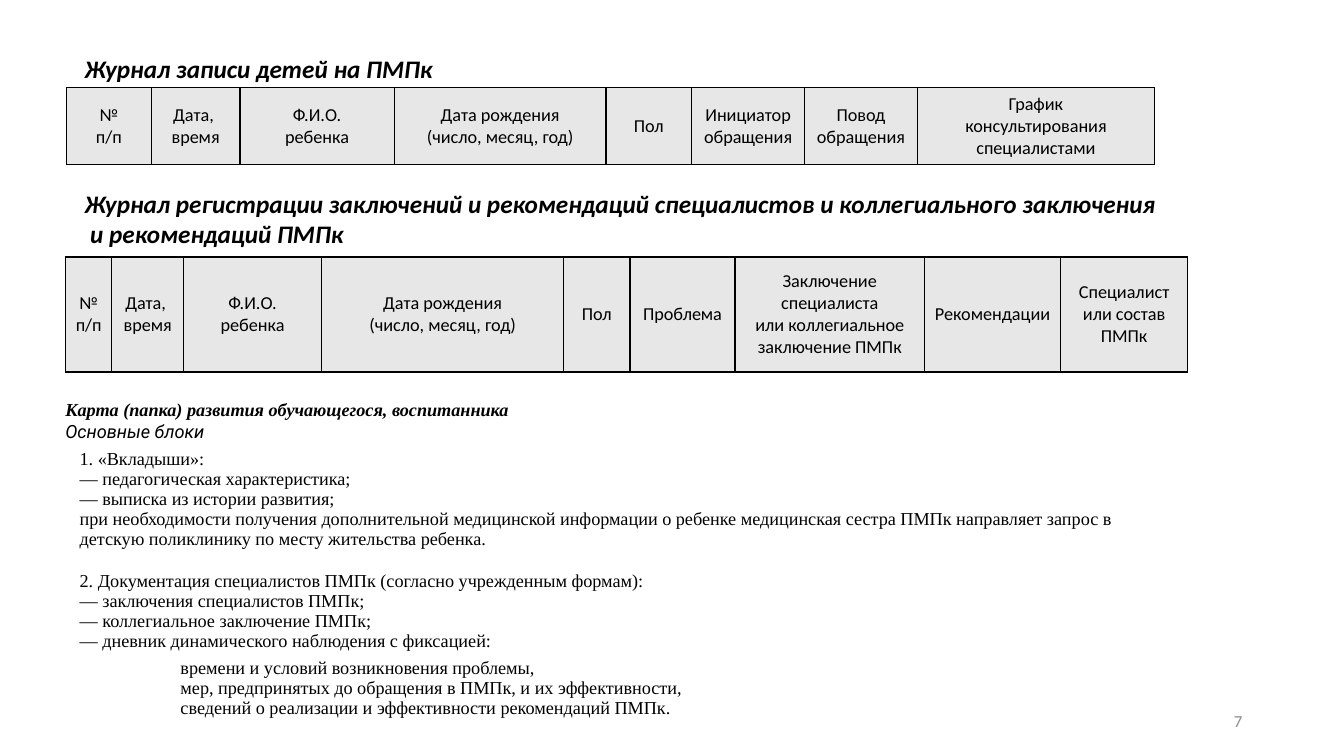
from lxml import etree
from pptx import Presentation
from pptx.dml.color import RGBColor
from pptx.enum.text import MSO_ANCHOR, PP_ALIGN
from pptx.oxml.ns import qn
from pptx.util import Inches, Pt

MIDDLE, TOP = MSO_ANCHOR.MIDDLE, MSO_ANCHOR.TOP
LEFT, CENTER, RIGHT = PP_ALIGN.LEFT, PP_ALIGN.CENTER, PP_ALIGN.RIGHT
TITLE_ONLY = 5
SANS, SERIF = "Calibri", "Times New Roman"
BLACK, GREY, WHITE, HEADER_FILL = "000000", "8C8C8C", "FFFFFF", "E7E7E7"

RECORD_COLUMNS = [
    (0.84, "№\vп/п"), (0.88, "Дата, \vвремя"), (1.53, "Ф.И.О.\vребенка"),
    (2.1, "Дата рождения\v(число, месяц, год)"), (0.85, "Пол"),
    (1.12, "Инициатор\vобращения"), (1.12, "Повод\vобращения"),
    (2.35, "График\vконсультирования\vспециалистами"),
]
CONCLUSION_COLUMNS = [
    (0.46, "№\vп/п"), (0.71, "Дата, \vвремя"), (1.37, "Ф.И.О.\vребенка"),
    (2.4, "Дата рождения\v(число, месяц, год)"), (0.66, "Пол"),
    (1.04, "Проблема"),
    (1.88, "Заключение\vспециалиста\vили коллегиальное\vзаключение ПМПк"),
    (1.35, "Рекомендации"), (1.26, "Специалист\vили состав ПМПк"),
]
INSERTS = (
    "1. «Вкладыши»:\v— педагогическая характеристика;\v"
    "— выписка из истории развития;\v"
    "при необходимости получения дополнительной медицинской информации о ребенке "
    "медицинская сестра ПМПк направляет запрос в детскую поликлинику "
    "по месту жительства ребенка."
)
DOCUMENTS = (
    "2. Документация специалистов ПМПк (согласно учрежденным формам):\v"
    "— заключения специалистов ПМПк;\v— коллегиальное заключение ПМПк;\v"
    "— дневник динамического наблюдения с фиксацией:"
)
DIARY = (
    "времени и условий возникновения проблемы,\v"
    "мер, предпринятых до обращения в ПМПк, и их эффективности,\v"
    "сведений о реализации и эффективности рекомендаций ПМПк."
)


def rgb(value):
    return RGBColor.from_string(value)


def format_paragraph(p, size, font=SANS, color=BLACK, bold=False, italic=False, align=LEFT):
    p.alignment = align
    for r in p.runs:
        f = r.font
        f.size, f.name, f.bold, f.italic = Pt(size), font, bold, italic
        f.color.rgb = rgb(color)


def place_text(sp, left, top, width, height, text, anchor=TOP, wrap=True):
    sp.left, sp.top, sp.width, sp.height = map(Inches, (left, top, width, height))
    tf = sp.text_frame
    tf.text = text
    tf.word_wrap, tf.vertical_anchor = wrap, anchor
    tf.margin_left = tf.margin_right = Inches(0.1)
    tf.margin_top = tf.margin_bottom = Inches(0.05)
    return tf.paragraphs


def add_text(s, *place, **options):
    return place_text(s.shapes.add_textbox(0, 0, 0, 0), *place, **options)


def set_borders(cell, color, width):
    tc_pr = cell._tc.get_or_add_tcPr()
    for i, side in enumerate(("lnL", "lnR", "lnT", "lnB")):
        ln = etree.Element(qn(f"a:{side}"), w=str(Pt(width)))
        fill = etree.SubElement(ln, qn("a:solidFill"))
        etree.SubElement(fill, qn("a:srgbClr"), val=color)
        tc_pr.insert(i, ln)


def add_grid(s, left, top, widths, heights, border, border_width):
    """Table without banding; cells get margins, borders and a middle anchor."""
    frame = s.shapes.add_table(len(heights), len(widths), Inches(left), Inches(top),
                               Inches(sum(widths)), Inches(sum(heights)))
    table = frame.table
    table.first_row = table.horz_banding = False
    for column, width in zip(table.columns, widths):
        column.width = Inches(width)
    for row, height in zip(table.rows, heights):
        row.height = Inches(height)
    for cell in table.iter_cells():
        cell.margin_left = cell.margin_right = Inches(0.05)
        cell.margin_top = cell.margin_bottom = Inches(0.05)
        cell.vertical_anchor = MIDDLE
        cell.fill.background()
        set_borders(cell, border, border_width)
    return table


def add_journal_header(s, left, top, height, columns):
    widths, labels = zip(*columns)
    table = add_grid(s, left, top, widths, [height], BLACK, 1)
    for cell, label in zip(table.iter_cells(), labels):
        cell.text = label
        cell.fill.solid()
        cell.fill.fore_color.rgb = rgb(HEADER_FILL)
        format_paragraph(cell.text_frame.paragraphs[0], 13, align=CENTER)


def add_blocks(s):
    table = add_grid(s, 0.74, 4.36, [10.67], [1.19, 1.67], WHITE, 1.5)
    table.cell(0, 0).text = INSERTS
    table.cell(1, 0).text = f"{DOCUMENTS}\n{DIARY}"
    for cell in table.iter_cells():
        for p in cell.text_frame.paragraphs:
            format_paragraph(p, 13, SERIF)
    diary = table.cell(1, 0).text_frame.paragraphs[1]
    diary.space_before = diary.space_after = Pt(5)
    diary._p.get_or_add_pPr().set("marL", str(Inches(1)))


def main():
    prs = Presentation()
    prs.slide_width, prs.slide_height = Inches(13.33), Inches(7.5)
    s = prs.slides.add_slide(prs.slide_layouts[TITLE_ONLY])

    # Journal of appointments
    title = place_text(s.shapes.title, 0.74, 0.48, 6.13, 0.4, "Журнал записи детей на ПМПк")
    format_paragraph(title[0], 18, bold=True, italic=True)
    add_journal_header(s, 0.66, 0.87, 0.75, RECORD_COLUMNS)

    # Journal of conclusions
    heading = add_text(
        s, 0.74, 1.82, 10.95, 0.7,
        "Журнал регистрации заключений и рекомендаций специалистов "
        "и коллегиального заключения\v и рекомендаций ПМПк", wrap=False)
    format_paragraph(heading[0], 18, bold=True, italic=True)
    add_journal_header(s, 0.65, 2.55, 1.14, CONCLUSION_COLUMNS)

    # Development card: its heading lies in front of the white table border
    add_blocks(s)
    card, blocks = add_text(
        s, 0.55, 3.9, 12, 0.5,
        "Карта (папка) развития обучающегося, воспитанника\nОсновные блоки", wrap=False)
    format_paragraph(card, 13, SERIF, bold=True, italic=True)
    format_paragraph(blocks, 13, "Roboto", italic=True)

    # Slide number
    number = add_text(s, 9.42, 6.95, 3, 0.4, "7", anchor=MIDDLE)
    format_paragraph(number[0], 12, color=GREY, align=RIGHT)

    prs.save("out.pptx")


if __name__ == "__main__":
    main()
